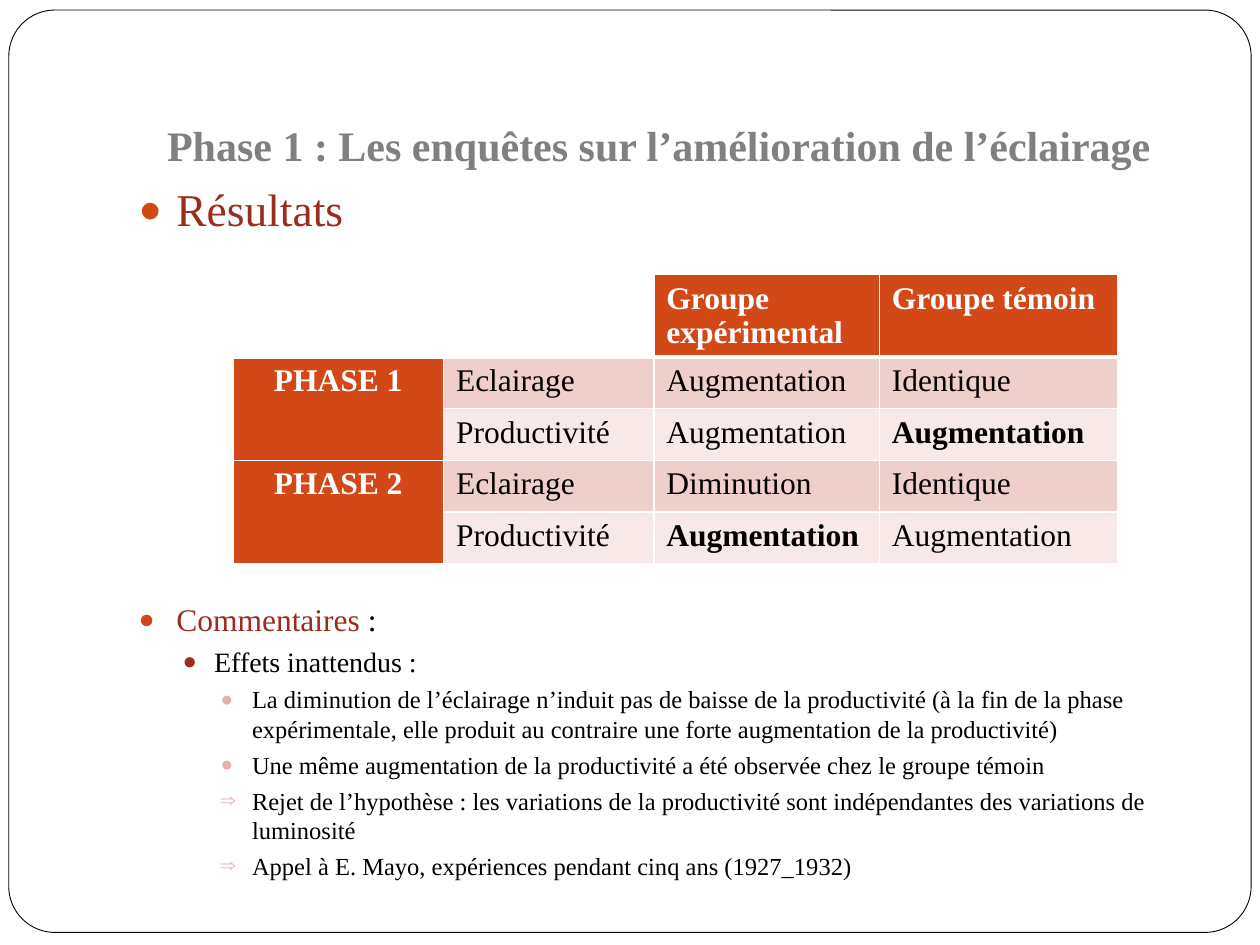
import pptx
import pptx.dml.color
import pptx.enum.shapes
import pptx.enum.text
import pptx.oxml
import pptx.oxml.ns
import pptx.util

COLUMNS, ROWS = 100, 75
UNIT = pptx.util.Inches(10) // COLUMNS
FONT = "Times New Roman"
ORANGE, RED, PINK = "D34817", "9B2D1F", "E6B1AC"
BLACK, WHITE, GREY = "000000", "FFFFFF", "808080"
BANDS = ["EFCFCC", "F7E9E8"]
ALIGN = pptx.enum.text.PP_ALIGN
ANCHOR = pptx.enum.text.MSO_ANCHOR

LEVELS = [
    {"indent": 3, "hang": 3, "before": 5.8, "bullet": ORANGE},
    {"indent": 6, "hang": 2.5, "before": 3.7, "bullet": RED},
    {"indent": 9, "hang": 2.5, "before": 3.7, "bullet": PINK},
]
TABLE_GAP = 208
OUTLINE = [
    (0, "●", 26, [("Résultats", RED)], None),
    (0, "●", 18, [("Commentaires", RED), (" :", BLACK)], TABLE_GAP),
    (1, "●", 16, [("Effets inattendus :", BLACK)], None),
    (2, "●", 14, [("La diminution de l’éclairage n’induit pas de baisse de la productivité "
                   "(à la fin de la phase expérimentale, elle produit au contraire une forte "
                   "augmentation de la productivité)", BLACK)], None),
    (2, "●", 14, [("Une même augmentation de la productivité a été observée "
                   "chez le groupe témoin", BLACK)], None),
    (2, "⇒", 14, [("Rejet de l’hypothèse : les variations de la productivité sont "
                   "indépendantes des variations de luminosité", BLACK)], None),
    (2, "⇒", 14, [("Appel à E. Mayo, expériences pendant cinq ans (1927_1932)", BLACK)], None),
]
RESULTS = [
    ["", "", "Groupe expérimental", "Groupe témoin"],
    ["PHASE 1", "Eclairage", "Augmentation", "Identique"],
    ["", "Productivité", "Augmentation", "Augmentation"],
    ["PHASE 2", "Eclairage", "Diminution", "Identique"],
    ["", "Productivité", "Augmentation", "Augmentation"],
]
UNEXPECTED = {(2, 3), (4, 2)}


def grid(*units):
    """Turn grid units into slide lengths."""
    return [round(unit * UNIT) for unit in units]


def colour(value):
    """Turn a hex string into a colour."""
    return pptx.dml.color.RGBColor.from_string(value)


def apply(target, values):
    """Set each attribute named in a dict of format values."""
    for name, value in values.items():
        setattr(target, name, value)


def place(shape, box):
    """Move a shape onto a box of the grid."""
    apply(shape, dict(zip(("left", "top", "width", "height"), grid(*box))))


def write(para, text, size, ink, bold=False):
    """Add one formatted span to a paragraph."""
    span = para.add_run()
    span.text = text
    apply(span.font, {"name": FONT, "size": pptx.util.Pt(size), "bold": bold})
    span.font.color.rgb = colour(ink)


def add_bullet(para, level, symbol):
    """Give a paragraph its hanging indent and bullet."""
    indent, hang = grid(level["indent"], level["hang"])
    properties = para._p.get_or_add_pPr()
    properties.set("marL", str(indent))
    properties.set("indent", str(-hang))
    namespace = pptx.oxml.ns.nsdecls("a")
    for markup in (
        f'<a:buClr {namespace}><a:srgbClr val="{level["bullet"]}"/></a:buClr>',
        f'<a:buSzPct {namespace} val="85000"/>',
        f'<a:buChar {namespace} char="{symbol}"/>',
    ):
        properties.append(pptx.oxml.parse_xml(markup))


def add_borders(cell, bottom):
    """Draw white borders around a cell, with the given bottom width."""
    properties = cell._tc.get_or_add_tcPr()
    for index, (side, width) in enumerate({"L": 1, "R": 1, "T": 1, "B": bottom}.items()):
        properties.insert(index, pptx.oxml.parse_xml(
            f'<a:ln{side} {pptx.oxml.ns.nsdecls("a")} w="{pptx.util.Pt(width)}">'
            f'<a:solidFill><a:srgbClr val="{WHITE}"/></a:solidFill></a:ln{side}>'))


def add_frame(page, box):
    """Draw the rounded page frame behind everything."""
    frame = page.shapes.add_shape(
        pptx.enum.shapes.MSO_SHAPE.ROUNDED_RECTANGLE, *grid(*box))
    frame.adjustments[0] = 0.05
    frame.shadow.inherit = False
    frame.fill.solid()
    frame.fill.fore_color.rgb = colour(WHITE)
    frame.line.color.rgb = colour(BLACK)
    frame.line.width = pptx.util.Pt(0.5)
    page.shapes._spTree.insert(2, frame._element)


def fill_title(page, box):
    """Write the title at the bottom of its box."""
    title = page.shapes.title
    place(title, box)
    apply(title.text_frame, {
        "vertical_anchor": ANCHOR.BOTTOM, "word_wrap": True,
        "auto_size": pptx.enum.text.MSO_AUTO_SIZE.NONE, "margin_bottom": UNIT})
    para = title.text_frame.paragraphs[0]
    para.alignment = ALIGN.CENTER
    write(para, "Phase 1 : Les enquêtes sur l’amélioration de l’éclairage", 24, GREY, True)


def fill_body(page, box):
    """Write the outline, leaving a gap for the table."""
    body = page.placeholders[1]
    place(body, box)
    frame = body.text_frame
    apply(frame, {"vertical_anchor": ANCHOR.TOP, "word_wrap": True,
                  "auto_size": pptx.enum.text.MSO_AUTO_SIZE.NONE})
    for index, (depth, symbol, size, spans, gap) in enumerate(OUTLINE):
        para = frame.add_paragraph() if index else frame.paragraphs[0]
        level = LEVELS[depth]
        apply(para, {"level": depth, "alignment": ALIGN.LEFT,
                     "space_before": pptx.util.Pt(gap or level["before"])})
        add_bullet(para, level, symbol)
        for text, ink in spans:
            write(para, text, size, ink)


def add_results(page, box):
    """Build the table of results with merged phase cells."""
    table = page.shapes.add_table(len(RESULTS), len(RESULTS[0]), *grid(*box)).table
    apply(table, {"first_row": False, "horz_banding": False})
    for column, width in zip(table.columns, grid(16.7, 16.7, 17.9, 18.9)):
        column.width = width
    for row, height in zip(table.rows, grid(6.4, *[4.1] * 4)):
        row.height = height
    for top in (1, 3):
        table.cell(top, 0).merge(table.cell(top + 1, 0))
    for row, texts in enumerate(RESULTS):
        for column, text in enumerate(texts):
            cell = table.cell(row, column)
            heading = row == 0 or column == 0
            if row == 0 and not text:
                cell.fill.background()
            else:
                cell.fill.solid()
                cell.fill.fore_color.rgb = colour(ORANGE if heading else BANDS[(row - 1) % 2])
            add_borders(cell, 1 if row else 3)
            if text:
                para = cell.text_frame.paragraphs[0]
                para.alignment = ALIGN.LEFT if column else ALIGN.CENTER
                write(para, text, 18, WHITE if heading else BLACK,
                      heading or (row, column) in UNEXPECTED)


def main():
    """Build the slide and save the deck."""
    deck = pptx.Presentation()
    deck.slide_width, deck.slide_height = grid(COLUMNS, ROWS)
    page = deck.slides.add_slide(deck.slide_layouts[1])
    add_frame(page, (0.7, 0.8, 98.6, 73.2))
    fill_title(page, (9.8, 6.8, 85, 7.7))
    fill_body(page, (10, 13.9, 85, 56.7))
    add_results(page, (18.5, 21.8, 70.2, 22.8))
    deck.save("out.pptx")


if __name__ == "__main__":
    main()
